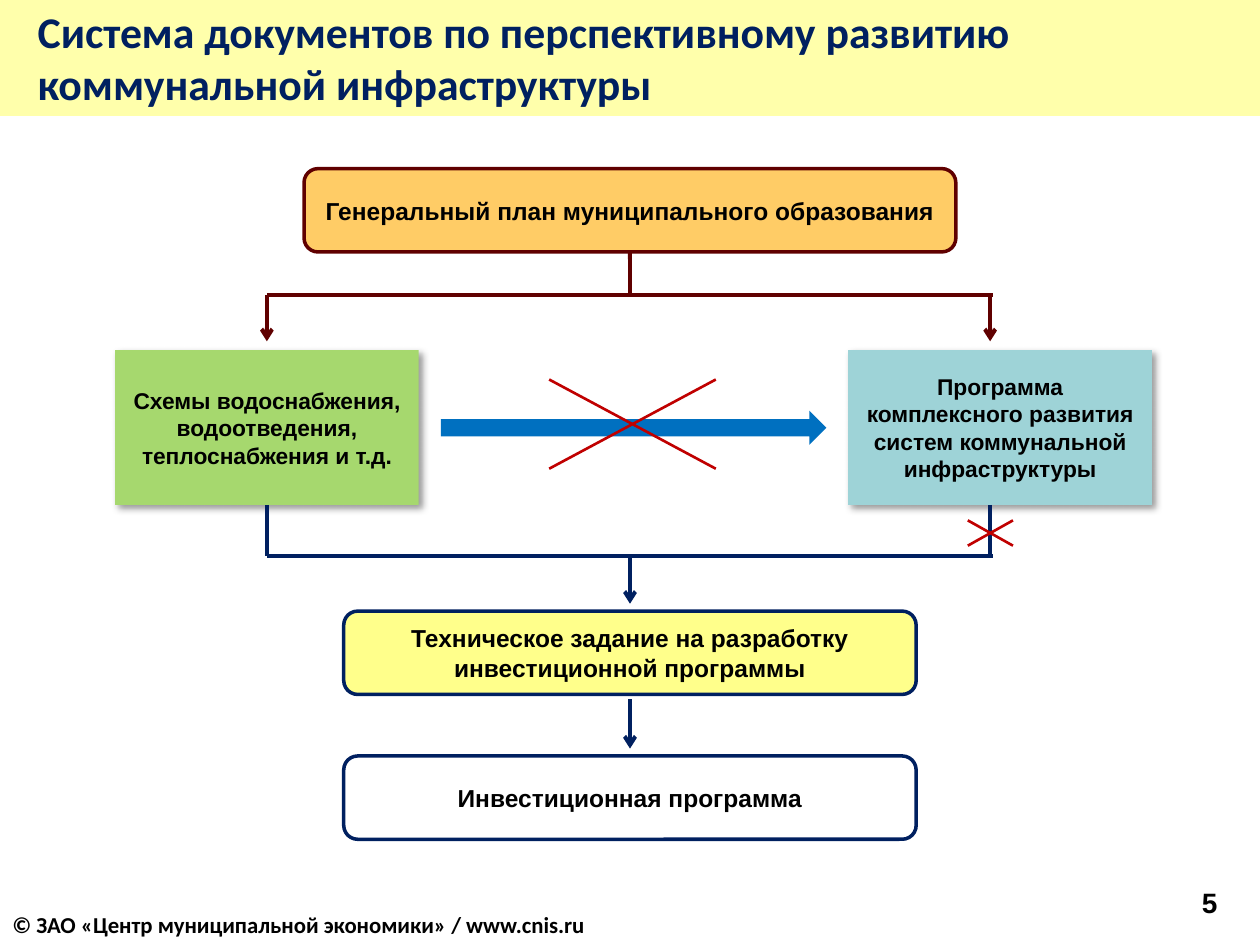
from dataclasses import dataclass
from typing import Optional

from lxml import etree
from pptx import Presentation
from pptx.dml.color import RGBColor
from pptx.enum.shapes import MSO_CONNECTOR, MSO_SHAPE
from pptx.enum.text import MSO_ANCHOR, PP_ALIGN
from pptx.oxml import parse_xml
from pptx.oxml.ns import qn
from pptx.util import Cm, Pt

RECT = MSO_SHAPE.RECTANGLE
ROUND = MSO_SHAPE.ROUNDED_RECTANGLE
ARROW = MSO_SHAPE.RIGHT_ARROW
LINE = MSO_CONNECTOR.STRAIGHT
MIDDLE = MSO_ANCHOR.MIDDLE
LEFT, CENTER, RIGHT = PP_ALIGN.LEFT, PP_ALIGN.CENTER, PP_ALIGN.RIGHT

BLACK = RGBColor(0x00, 0x00, 0x00)
WHITE = RGBColor(0xFF, 0xFF, 0xFF)
NAVY = RGBColor(0x00, 0x20, 0x60)
MAROON = RGBColor(0x60, 0x00, 0x00)
RED = RGBColor(0xC0, 0x00, 0x00)
BLUE = RGBColor(0x00, 0x70, 0xC0)
CREAM = RGBColor(0xFF, 0xFF, 0xAB)
ORANGE = RGBColor(0xFF, 0xCC, 0x66)
GREEN = RGBColor(0xA6, 0xD8, 0x6E)
TEAL = RGBColor(0x9E, 0xD3, 0xD7)
YELLOW = RGBColor(0xFF, 0xFF, 0x8B)

WIDTH, HEIGHT = 25.4, 19.05
MID = WIDTH / 2
WEST, EAST = 5.38, 19.96
UPPER, LOWER = 5.94, 11.2
SHADOW = (
    '<a:effectLst xmlns:a="http://schemas.openxmlformats.org/drawingml/2006/main">'
    '<a:outerShdw blurRad="50800" dist="38100" dir="2700000" algn="tl" rotWithShape="0">'
    '<a:srgbClr val="000000"><a:alpha val="40000"/></a:srgbClr>'
    '</a:outerShdw></a:effectLst>'
)


@dataclass
class Box:
    text: str
    left: float
    top: float
    width: float
    height: float
    fill: RGBColor
    edge: Optional[RGBColor] = None
    kind: int = ROUND
    size: int = 14
    shade: bool = False


@dataclass
class Link:
    x1: float
    y1: float
    x2: float
    y2: float
    color: RGBColor
    head: bool = False
    start: Optional[str] = None
    weight: float = 2.25


def write(frame, text: str, size: int, face: str, color: RGBColor, align: int) -> None:
    frame.word_wrap = True
    frame.text = text
    para = frame.paragraphs[0]
    para.alignment = align
    para.font.size = Pt(size)
    para.font.name = face
    para.font.bold = True
    para.font.color.rgb = color


def draw_box(slide, box: Box):
    shape = slide.shapes.add_shape(
        box.kind, Cm(box.left), Cm(box.top), Cm(box.width), Cm(box.height))
    shape.fill.solid()
    shape.fill.fore_color.rgb = box.fill
    if box.edge is None:
        shape.line.fill.background()
    else:
        shape.line.color.rgb = box.edge
        shape.line.width = Pt(2)
    if box.shade:
        shape._element.spPr.append(parse_xml(SHADOW))
    else:
        shape.shadow.inherit = False
    if box.text:
        write(shape.text_frame, box.text, box.size, "Arial", BLACK, CENTER)
        shape.text_frame.vertical_anchor = MIDDLE
    return shape


def draw_link(slide, link: Link, shapes: dict) -> None:
    line = slide.shapes.add_connector(
        LINE, Cm(link.x1), Cm(link.y1), Cm(link.x2), Cm(link.y2))
    line.line.color.rgb = link.color
    line.line.width = Pt(link.weight)
    if link.start:
        line.begin_connect(shapes[link.start], 2)
    props = line._element.spPr
    if link.head:
        etree.SubElement(props.find(qn("a:ln")), qn("a:tailEnd"), type="arrow")
    etree.SubElement(props, qn("a:effectLst"))


def draw_cross(slide, left: float, top: float, right: float, base: float) -> None:
    for x1, x2 in ((left, right), (right, left)):
        draw_link(slide, Link(x1, top, x2, base, RED, weight=1.5), {})


def draw_note(slide, text: str, left: float, top: float, width: float,
              height: float, size: int, face: str, align: int) -> None:
    note = slide.shapes.add_textbox(Cm(left), Cm(top), Cm(width), Cm(height))
    write(note.text_frame, text, size, face, BLACK, align)


BOXES = {
    "plan": Box("Генеральный план муниципального образования",
                MID - 6.57, 3.4, 13.14, 1.68, ORANGE, MAROON),
    "scheme": Box("Схемы водоснабжения,\vводоотведения, теплоснабжения и т.д.",
                  WEST - 3.06, 7.06, 6.12, 3.12, GREEN, kind=RECT, size=13, shade=True),
    "program": Box("Программа комплексного развития систем коммунальной инфраструктуры",
                   17.1, 7.06, 6.12, 3.12, TEAL, kind=RECT, size=13, shade=True),
    "task": Box("Техническое задание на разработку инвестиционной программы",
                MID - 5.77, 12.32, 11.54, 1.68, YELLOW, NAVY),
    "invest": Box("Инвестиционная программа",
                  MID - 5.77, 15.24, 11.54, 1.68, WHITE, NAVY),
    "arrow": Box("", 8.89, 8.28, 7.77, 0.69, BLUE, kind=ARROW),
}

LINKS = [
    Link(MID, 5.08, MID, UPPER, MAROON, start="plan"),
    Link(WEST, UPPER, EAST + 0.05, UPPER, MAROON),
    Link(WEST, UPPER, WEST, 6.88, MAROON, head=True),
    Link(EAST, UPPER, EAST, 6.88, MAROON, head=True),
    Link(WEST, 10.18, WEST, LOWER, NAVY, start="scheme"),
    Link(EAST, 10.18, EAST, LOWER, NAVY),
    Link(WEST, LOWER, EAST + 0.05, LOWER, NAVY),
    Link(MID, LOWER, MID, 12.17, NAVY, head=True),
    Link(MID, 14.1, MID, 15.09, NAVY, head=True),
]


def main() -> None:
    deck = Presentation()
    deck.slide_width, deck.slide_height = Cm(WIDTH), Cm(HEIGHT)
    slide = deck.slides.add_slide(deck.slide_layouts[6])

    band = draw_box(slide, Box("", 0, -0.05, WIDTH, 2.39, CREAM, kind=RECT))
    write(band.text_frame,
          "Система документов по перспективному развитию\vкоммунальной инфраструктуры",
          25, "Calibri", NAVY, LEFT)
    band.text_frame.margin_left = Cm(0.76)
    band.text_frame.vertical_anchor = MIDDLE

    shapes = {name: draw_box(slide, box) for name, box in BOXES.items()}
    for link in LINKS:
        draw_link(slide, link, shapes)
    draw_cross(slide, 11.07, 7.65, 14.43, 9.45)
    draw_cross(slide, 19.51, 10.49, 20.42, 11)

    draw_note(slide, "5", 18.87, 17.73, 5.92, 0.76, 16, "Arial", RIGHT)
    draw_note(slide, "© ЗАО «Центр муниципальной экономики» / www.cnis.ru",
              0, 18.24, WIDTH, 0.81, 13, "Calibri", LEFT)
    deck.save("out.pptx")


if __name__ == "__main__":
    main()
